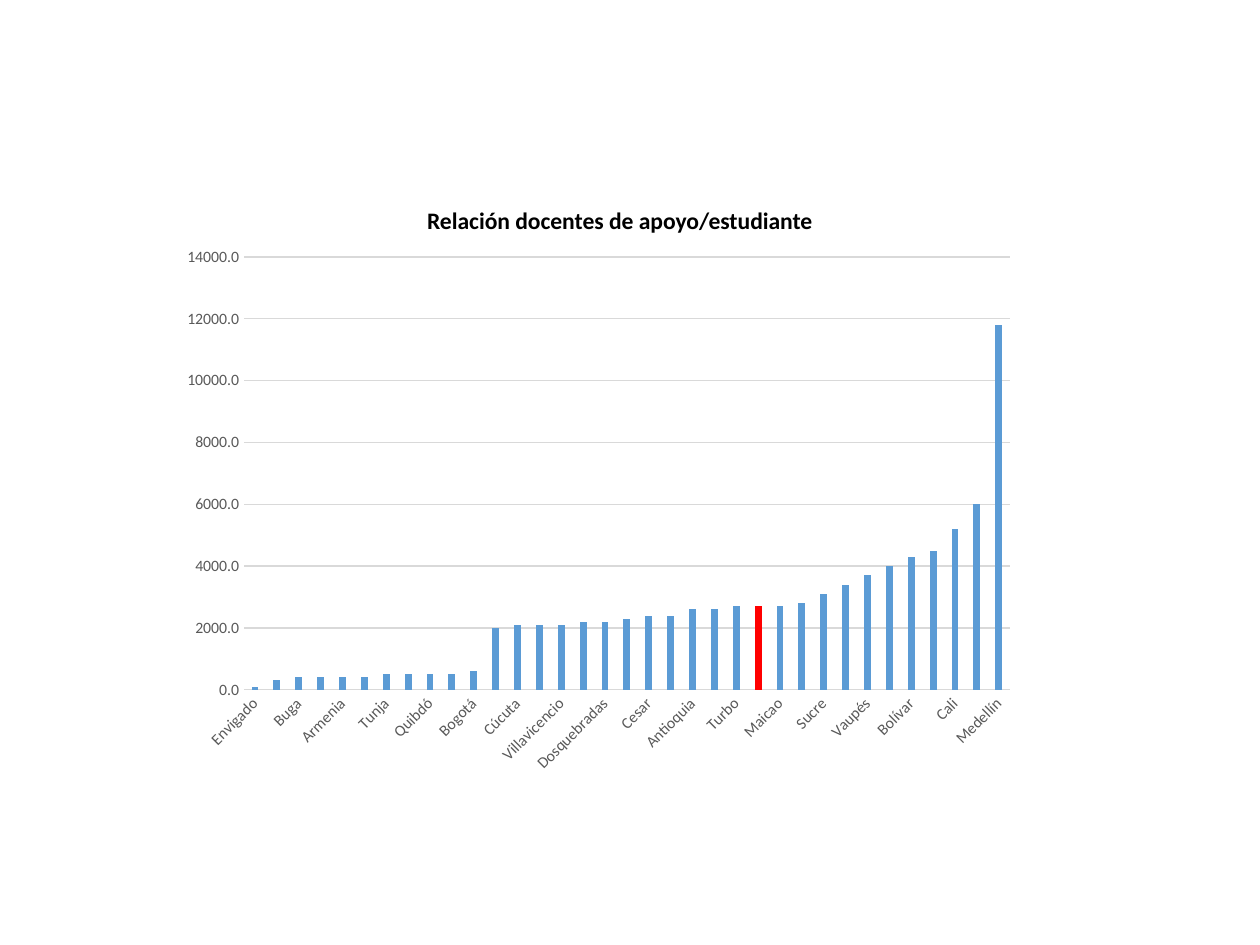
import pptx
import pptx.chart.data
import pptx.dml.color
import pptx.enum.chart
import pptx.enum.text
import pptx.util
from pptx.util import Inches

COLORS = {"text": "000000", "label": "595959", "grid": "D9D9D9", "bar": "5B9BD5", "national": "FF0000"}
FONT = "Calibri"
TEACHER_RATIOS = {
    "Envigado": 100, "Mosquera": 300, "Buga": 400, "Manizales": 400, "Armenia": 400,
    "Rionegro": 400, "Tunja": 500, "Riohacha": 500, "Quibdó": 500, "Quindío": 500,
    "Bogotá": 600, "Bucaramanga": 2000, "Cúcuta": 2100, "Facatativá": 2100,
    "Villavicencio": 2100, "Tumaco": 2200, "Dosquebradas": 2200, "Meta": 2300,
    "Cesar": 2400, "Nariño": 2400, "Antioquia": 2600, "Girón": 2600, "Turbo": 2700,
    "Nacional": 2700, "Maicao": 2700, "Soacha": 2800, "Sucre": 3100, "Piedecuesta": 3400,
    "Vaupés": 3700, "Cartago": 4000, "Bolívar": 4300, "Magdalena": 4500, "Cali": 5200,
    "Amazonas": 6000, "Medellín": 11800,
}


def rgb(name):
    return pptx.dml.color.RGBColor.from_string(COLORS[name])


def style_font(font, size, color):
    font.name = FONT
    font.size = pptx.util.Pt(size)
    font.color.rgb = rgb(color)


presentation = pptx.Presentation()
presentation.slide_width = Inches(10)
presentation.slide_height = Inches(7.5)
slide = presentation.slides.add_slide(presentation.slide_layouts[5])

title = slide.shapes.title
title.left, title.top = Inches(2.58), Inches(1.58)
title.width, title.height = Inches(4.68), Inches(0.33)
title.text_frame.text = "Relación docentes de apoyo/estudiante"
title.text_frame.vertical_anchor = pptx.enum.text.MSO_ANCHOR.MIDDLE
paragraph = title.text_frame.paragraphs[0]
paragraph.alignment = pptx.enum.text.PP_ALIGN.CENTER
style_font(paragraph.font, 13.5, "text")
paragraph.font.bold = True

chart_data = pptx.chart.data.CategoryChartData(number_format="0.0")
chart_data.categories = list(TEACHER_RATIOS)
chart_data.add_series("Series 1", list(TEACHER_RATIOS.values()))
chart = slide.shapes.add_chart(
    pptx.enum.chart.XL_CHART_TYPE.COLUMN_CLUSTERED,
    Inches(1.35), Inches(1.88), Inches(6.8), Inches(4.34), chart_data,
).chart
chart.has_title = False
chart.has_legend = False
style_font(chart.font, 10, "text")

plot = chart.plots[0]
plot.gap_width = 219
plot.overlap = -27
plot.vary_by_categories = False
series = plot.series[0]
series.format.fill.solid()
series.format.fill.fore_color.rgb = rgb("bar")
national_fill = series.points[list(TEACHER_RATIOS).index("Nacional")].format.fill
national_fill.solid()
national_fill.fore_color.rgb = rgb("national")

category_axis, value_axis = chart.category_axis, chart.value_axis
for axis in (category_axis, value_axis):
    axis.major_tick_mark = pptx.enum.chart.XL_TICK_MARK.NONE
    axis.minor_tick_mark = pptx.enum.chart.XL_TICK_MARK.NONE
    style_font(axis.tick_labels.font, 9, "label")

category_axis.has_major_gridlines = False
value_axis.has_major_gridlines = True
for line in (category_axis.format.line, value_axis.major_gridlines.format.line):
    line.color.rgb = rgb("grid")
    line.width = pptx.util.Pt(0.75)
value_axis.format.line.fill.background()
value_axis.minimum_scale = 0
value_axis.maximum_scale = 14000
value_axis.major_unit = 2000
value_axis.tick_labels.number_format = "0.0"
value_axis.tick_labels.number_format_is_linked = False

label_body = category_axis._element.find(".//" + pptx.oxml.ns.qn("a:bodyPr"))
label_body.set("rot", "-2700000")
label_body.set("vert", "horz")

presentation.save("out.pptx")
